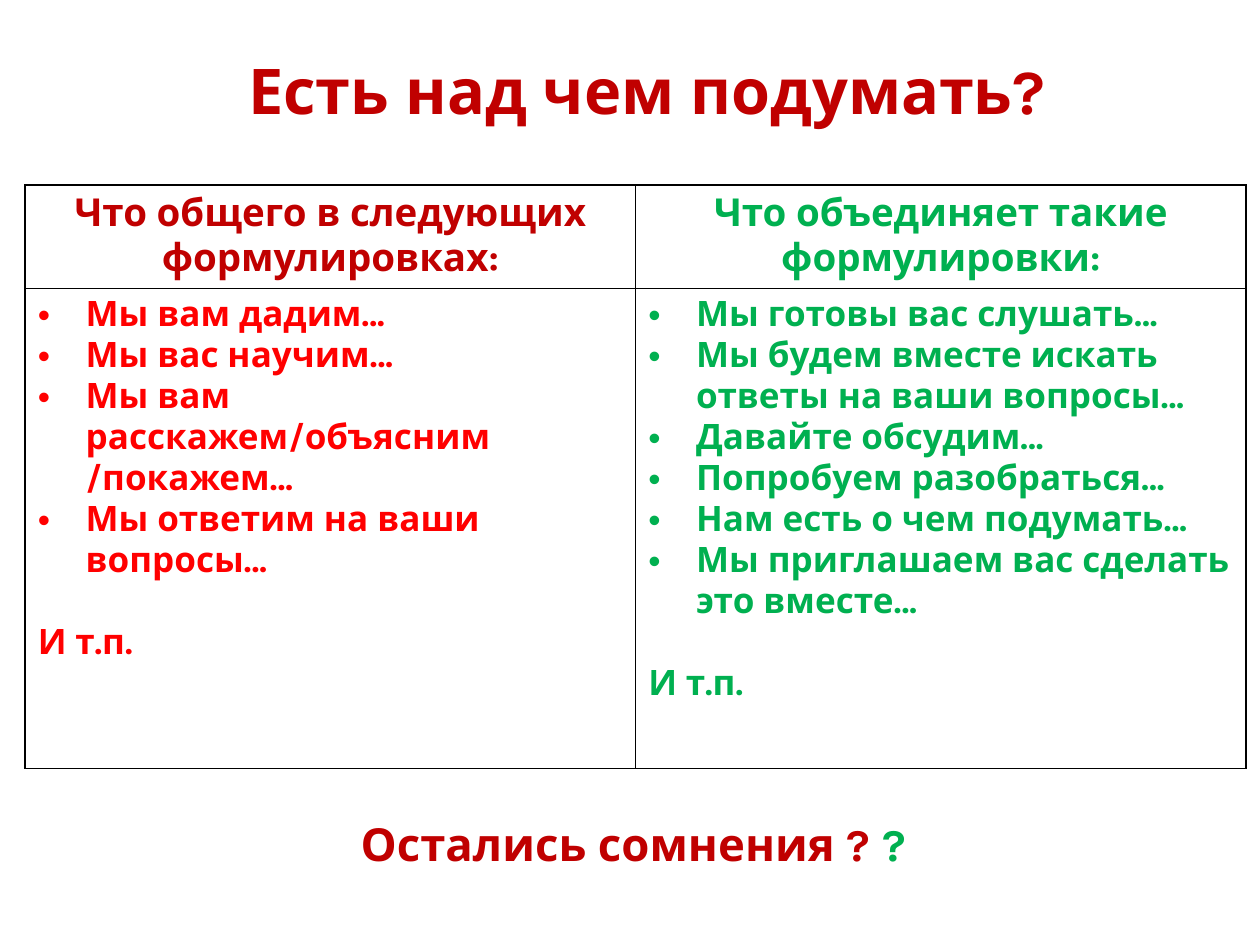
from lxml import etree
from pptx import Presentation
from pptx.dml.color import RGBColor
from pptx.enum.text import MSO_ANCHOR, MSO_AUTO_SIZE, PP_ALIGN
from pptx.oxml.ns import qn
from pptx.util import Inches, Pt

CENTER, LEFT = PP_ALIGN.CENTER, PP_ALIGN.LEFT
TOP = MSO_ANCHOR.TOP
FIXED = MSO_AUTO_SIZE.NONE
FONT = "Karla"
DARK, RED, GREEN, WHITE, BLACK = "C00000", "FF0000", "00B050", "FFFFFF", "000000"
EDGES = ("a:lnL", "a:lnR", "a:lnT", "a:lnB")
HEADS = [
    ("Что общего в следующих формулировках:", DARK),
    ("Что объединяет такие формулировки:", GREEN),
]
LISTS = [
    (["Мы вам дадим…", "Мы вас научим…",
      "Мы вам расскажем/объясним /покажем…",
      "Мы ответим на ваши вопросы…"], RED),
    (["Мы готовы вас слушать…",
      "Мы будем вместе искать ответы на ваши вопросы…",
      "Давайте обсудим…", "Попробуем разобраться…",
      "Нам есть о чем подумать…",
      "Мы приглашаем вас сделать это вместе…"], GREEN),
]


def tint(code):
    """Return the colour for a hex string."""
    return RGBColor.from_string(code)


def write(para, text, size=20, color=DARK, align=LEFT, before=0):
    """Add a bold run to a paragraph and format both."""
    para.alignment = align
    para.space_before = Pt(before)
    run = para.add_run()
    run.text = text
    font = run.font
    font.name, font.size, font.bold = FONT, Pt(size), True
    font.color.rgb = tint(color)


def bullet(para):
    """Give a paragraph a hanging round bullet."""
    props = para._p.get_or_add_pPr()
    props.set("marL", str(Inches(0.38)))
    props.set("indent", str(-Inches(0.38)))
    etree.SubElement(props, qn("a:buFont")).set("typeface", "Arial")
    etree.SubElement(props, qn("a:buChar")).set("char", "•")


def border(cell):
    """Draw a thin black line on each edge of a cell."""
    props = cell._tc.get_or_add_tcPr()
    for spot, edge in enumerate(EDGES):
        line = etree.Element(qn(edge), w=str(Pt(1)))
        fill = etree.SubElement(line, qn("a:solidFill"))
        etree.SubElement(fill, qn("a:srgbClr")).set("val", BLACK)
        props.insert(spot, line)


def place(shape, box):
    """Move a text shape into a box and set its frame."""
    shape.left, shape.top, shape.width, shape.height = map(Inches, box)
    frame = shape.text_frame
    frame.word_wrap = True
    frame.auto_size = FIXED
    frame.vertical_anchor = TOP
    return frame.paragraphs[0]


def add_title(slide, box):
    """Fill the title placeholder."""
    para = place(slide.shapes.title, box)
    write(para, "Есть над чем подумать?", size=36, align=CENTER, before=3)


def add_grid(slide, box):
    """Build the table that compares the two kinds of phrases."""
    grid = slide.shapes.add_table(2, 2, *map(Inches, box)).table
    grid.rows[0].height = Inches(0.82)
    grid.rows[1].height = Inches(box[3] - 0.82)
    for col, (head, items) in enumerate(zip(HEADS, LISTS)):
        top, body = grid.cell(0, col), grid.cell(1, col)
        for cell in (top, body):
            cell.fill.solid()
            cell.fill.fore_color.rgb = tint(WHITE)
            border(cell)
        text, color = head
        write(top.text_frame.paragraphs[0], text, size=22, color=color, align=CENTER)
        add_list(body.text_frame, *items)


def add_list(frame, lines, color):
    """Write bulleted lines and a closing line set apart."""
    para = frame.paragraphs[0]
    for line in lines:
        write(para, line, color=color)
        bullet(para)
        para = frame.add_paragraph()
    write(para, "И т.п.", color=color, before=23.4)


def add_foot(slide, box):
    """Write the closing question under the table."""
    para = place(slide.shapes.add_textbox(*map(Inches, box)), box)
    for text, color in (("Остались сомнения ? ", DARK), ("?", GREEN)):
        write(para, text, size=26, color=color, align=CENTER, before=2)


def main():
    """Build and save the slide."""
    deck = Presentation()
    deck.slide_width, deck.slide_height = Inches(10), Inches(7.5)
    slide = deck.slides.add_slide(deck.slide_layouts[5])
    add_grid(slide, (0.2, 1.47, 9.69, 4.63))
    add_title(slide, (0.39, 0.36, 9.49, 0.87))
    add_foot(slide, (0.28, 6.43, 9.49, 0.63))
    deck.save("out.pptx")


if __name__ == "__main__":
    main()
